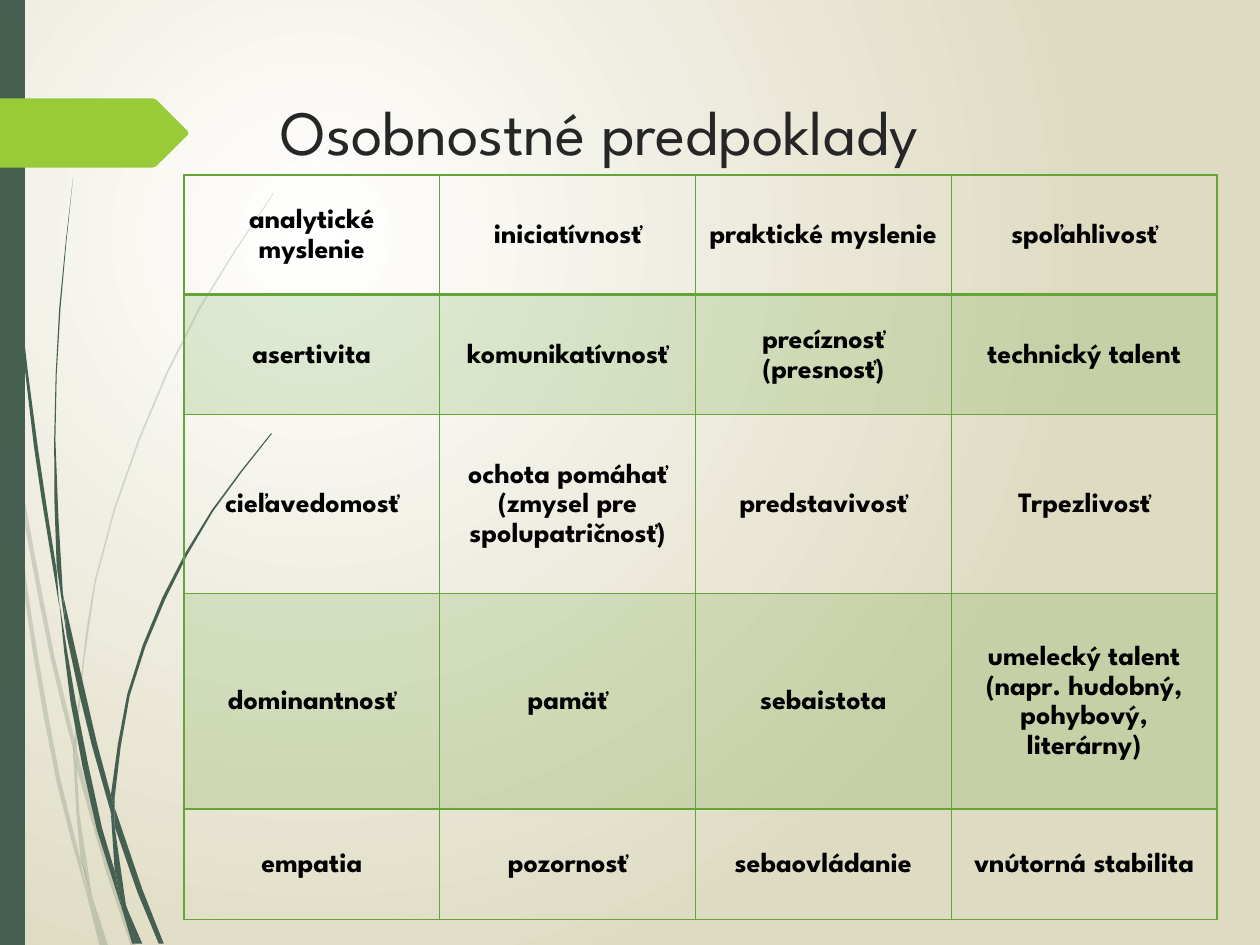
"""Slide with a table of personality traits beside a decoration of grass blades."""
from itertools import chain
from math import dist

from lxml import etree
from pptx import Presentation
from pptx.dml.color import RGBColor
from pptx.enum import text
from pptx.oxml import ns
from pptx.util import Inches, Pt

PINE = RGBColor(0x45, 0x5F, 0x51)
LIME = RGBColor(0x99, 0xCB, 0x38)
LEAF = RGBColor(0x63, 0xA5, 0x37)
INK = RGBColor(0x26, 0x26, 0x26)
BLACK = RGBColor(0, 0, 0)
WHITE = RGBColor(0xFF, 0xFF, 0xFF)
SAND = RGBColor(0xDF, 0xDB, 0xC2)
FONT = "League Spartan"

HEADING = "Osobnostné predpoklady"
TRAITS = [
    ["analytické myslenie", "iniciatívnosť", "praktické myslenie", "spoľahlivosť"],
    ["asertivita", "komunikatívnosť", "precíznosť (presnosť)", "technický talent"],
    ["cieľavedomosť", "ochota pomáhať (zmysel pre spolupatričnosť)",
     "predstavivosť", "Trpezlivosť"],
    ["dominantnosť", "pamäť", "sebaistota",
     "umelecký talent (napr. hudobný, pohybový, literárny)"],
    ["empatia", "pozornosť", "sebaovládanie", "vnútorná stabilita"],
]
COLUMN_WIDTHS = [2.03, 2.03, 2.03, 2.11]
ROW_HEIGHTS = [0.95, 0.95, 1.42, 1.71, 0.88]

PALE_BLADES = [
    ([(0.08, 3.5), (0, 2.82)], [(0, 2.99), (0.08, 3.5)]),
    ([(0.12, 3.76), (0.4, 5.22), (0.59, 5.99)], [(0.59, 5.86), (0.43, 5.2), (0.1, 3.45)]),
    ([(0.61, 6.1), (0.85, 6.94), (1.04, 7.51)],
     [(1.08, 7.51), (0.88, 6.92), (0.61, 5.96)]),
    ([(0.73, 7.11), (0.83, 7.51)], [(0.86, 7.51)]),
    ([(0.08, 3.5), (0.19, 4.7), (0.45, 6.21), (0.7, 7.14)],
     [(0.64, 6.83), (0.48, 6.19), (0.22, 4.69), (0.08, 3.5)]),
    ([(0.58, 5.99), (0.64, 6.83), (0.73, 7.11)],
     [(0.63, 6.46), (0.61, 6.08)]),
    ([(0.61, 5.96), (0.61, 5.84), (0.76, 4.62), (1.11, 3.49), (1.59, 2.45), (2.17, 1.54)],
     [(2.17, 1.53), (1.58, 2.44), (1.1, 3.48), (0.75, 4.61), (0.59, 5.86)]),
    ([(0.7, 7.14), (0.79, 7.51)], [(0.82, 7.51)]),
    ([(0.61, 6.1), (0.61, 5.96)], [(0.59, 5.86), (0.58, 5.99)]),
    ([(0.65, 6.83), (0.7, 7.14), (0.82, 7.51)], [(0.83, 7.51), (0.73, 7.11)]),
]
DARK_BLADES = [
    ([(0.02, 0), (0.05, 1.1), (0.14, 2.33), (0.27, 3.55), (0.47, 4.81)],
     [(0.45, 4.53), (0.3, 3.55), (0.15, 2.32), (0.06, 1.09), (0.03, 0)]),
    ([(0.5, 4.72), (0.53, 5.05), (0.73, 5.92), (0.88, 6.45)],
     [(0.88, 6.31), (0.77, 5.9), (0.5, 4.72)]),
    ([(0.91, 6.41), (0.91, 6.56), (1.09, 7.08), (1.26, 7.49)],
     [(1.3, 7.49), (1.13, 7.06), (0.91, 6.41)]),
    ([(0.47, 4.77), (0.56, 5.57), (0.77, 6.59), (0.97, 7.22)],
     [(0.91, 6.91), (0.81, 6.57), (0.6, 5.56), (0.47, 4.77)]),
    ([(0.5, 4.72), (0.44, 3.49), (0.48, 2.45), (0.58, 1.41)],
     [(0.58, 1.41), (0.47, 2.45), (0.43, 3.49), (0.45, 4.49), (0.49, 4.72)]),
    ([(1, 7.19), (1.1, 7.49)], [(1.13, 7.49)]),
    ([(0.45, 4.49), (0.53, 5.05)], [(0.5, 4.72)]),
    ([(0.91, 6.41), (0.91, 6.33), (1.03, 5.52), (1.31, 4.76), (1.69, 4.06), (2.16, 3.44)],
     [(2.15, 3.44), (1.68, 4.05), (1.29, 4.74), (1.01, 5.51), (0.88, 6.31)]),
    ([(0.97, 7.22), (1.05, 7.49)], [(1.08, 7.49)]),
    ([(0.88, 6.45), (0.91, 6.91), (1, 7.19)], [(0.91, 6.56)]),
    ([(0.88, 6.45), (0.91, 6.56)], [(0.91, 6.41), (0.88, 6.31)]),
    ([(0.91, 6.91), (0.97, 7.22), (1.08, 7.49)], [(1.1, 7.49), (0.96, 7.06)]),
]
STEM = [(0, 0), (0.2, 0), (0.2, 7.5), (0, 7.5)]
PENNANT = [(0, 0.78), (1.21, 0.78), (1.24, 0.79), (1.49, 1.04), (1.49, 1.07),
           (1.24, 1.32), (1.21, 1.33), (0, 1.33)]


def smooth(edge, stride=0.5):
    """Return points along a curve through every point of the edge."""
    if len(edge) < 3:
        return edge
    padded = [edge[0], *edge, edge[-1]]
    slopes = [[(n - p) / (dist(a, b) + dist(b, c)) for p, n in zip(a, c)]
              for a, b, c in zip(padded, padded[1:], padded[2:])]
    curve = [edge[0]]
    for a, b, slope_a, slope_b in zip(edge, edge[1:], slopes, slopes[1:]):
        span = dist(a, b)
        steps = max(1, round(span / stride))
        for t in (step / steps for step in range(1, steps + 1)):
            rise = t * t * (3 - 2 * t)
            leave, arrive = t * (1 - t) ** 2 * span, t * t * (t - 1) * span
            curve.append(tuple(p + (q - p) * rise + leave * m + arrive * n
                               for p, q, m, n in zip(a, b, slope_a, slope_b)))
    return curve


def set_alpha(holder, percent):
    """Make the solid fill of an element partly transparent."""
    color = holder.find(ns.qn("a:solidFill"))[0]
    etree.SubElement(color, ns.qn("a:alpha"), val=str(percent * 1000))


def add_outline(slide, points, color, alpha=100):
    """Add a filled closed outline."""
    start, *rest = [(Inches(x), Inches(y)) for x, y in points]
    builder = slide.shapes.build_freeform(*start)
    builder.add_line_segments(rest, close=True)
    outline = builder.convert_to_shape()
    outline.shadow.inherit = False
    outline.line.fill.background()
    outline.fill.solid()
    outline.fill.fore_color.rgb = color
    if alpha < 100:
        set_alpha(outline._element.spPr, alpha)


def write(frame, words, size, color, bold=False):
    """Write one formatted paragraph and return it."""
    paragraph = frame.paragraphs[0]
    run = paragraph.add_run()
    run.text = words
    run.font.color.rgb = color
    for key, value in {"name": FONT, "size": Pt(size), "bold": bold}.items():
        setattr(run.font, key, value)
    return paragraph


def add_borders(cell, widths):
    """Draw the borders of a cell from a dict of side and width."""
    for side, width in widths.items():
        border = etree.SubElement(cell._tc.get_or_add_tcPr(), ns.qn(f"a:ln{side}"),
                                  w=str(Pt(width)))
        fill = etree.SubElement(border, ns.qn("a:solidFill"))
        etree.SubElement(fill, ns.qn("a:srgbClr"), val=str(LEAF))


def add_background(slide):
    """Fill the background with a round gradient."""
    fill = slide.background.fill
    fill.gradient()
    for stop, position, color in zip(fill.gradient_stops, (0, 1), (WHITE, SAND)):
        stop.position = position
        stop.color.rgb = color
    gradient = slide._element.find(".//" + ns.qn("a:gradFill"))
    line = gradient.find(ns.qn("a:lin"))
    circle = etree.Element(ns.qn("a:path"), path="circle")
    etree.SubElement(circle, ns.qn("a:fillToRect"),
                     l="50000", t="50000", r="100000", b="100000")
    gradient.replace(line, circle)


def add_traits(slide):
    """Add the table of traits."""
    area = [Inches(n) for n in (1.46, 1.39, sum(COLUMN_WIDTHS), sum(ROW_HEIGHTS))]
    table = slide.shapes.add_table(len(TRAITS), len(TRAITS[0]), *area).table
    table.first_row = table.horz_banding = False
    for column, width in zip(table.columns, COLUMN_WIDTHS):
        column.width = Inches(width)
    for row, height in zip(table.rows, ROW_HEIGHTS):
        row.height = Inches(height)
    layout = {"vertical_anchor": text.MSO_ANCHOR.MIDDLE, "margin_left": Inches(0.07),
              "margin_right": Inches(0.07), "margin_top": 0, "margin_bottom": 0}
    for index, cell in enumerate(chain.from_iterable(row.cells for row in table.rows)):
        level, place = divmod(index, len(COLUMN_WIDTHS))
        for key, value in layout.items():
            setattr(cell, key, value)
        paragraph = write(cell.text_frame, TRAITS[level][place], 16, BLACK, True)
        paragraph.alignment = text.PP_ALIGN.CENTER
        paragraph.line_spacing = 1.15
        add_borders(cell, {"L": 1, "R": 1, "T": 2 if level == 1 else 1,
                           "B": 2 if level == 0 else 1})
        if level % 2:
            cell.fill.solid()
            cell.fill.fore_color.rgb = LEAF
            set_alpha(cell._tc.tcPr, 20)
        else:
            cell.fill.background()


def main():
    deck = Presentation()
    deck.slide_width, deck.slide_height = Inches(10), Inches(7.5)
    slide = deck.slides.add_slide(deck.slide_layouts[6])
    add_background(slide)
    for blades, alpha in ((PALE_BLADES, 20), (DARK_BLADES, 100)):
        for out, back in blades:
            add_outline(slide, smooth(out) + smooth(back), PINE, alpha)
    add_outline(slide, STEM, PINE)
    add_outline(slide, PENNANT, LIME)
    heading = slide.shapes.add_textbox(*map(Inches, (2.13, 0.68, 7.21, 0.7))).text_frame
    heading.word_wrap = True
    heading.vertical_anchor = text.MSO_ANCHOR.BOTTOM
    write(heading, HEADING, 36, INK)
    add_traits(slide)
    deck.save("out.pptx")


if __name__ == "__main__":
    main()
